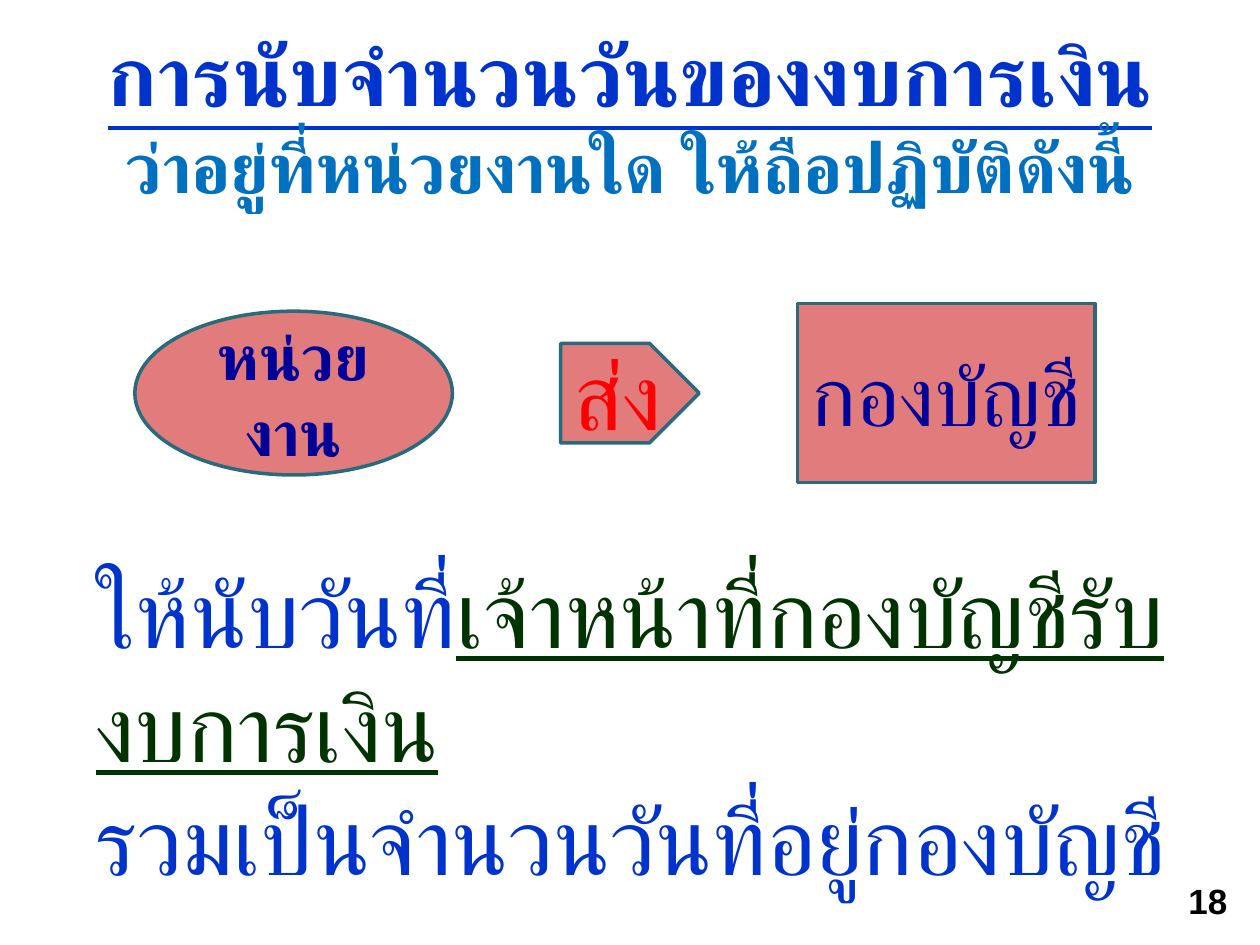
from pptx import Presentation
from pptx.dml.color import RGBColor
from pptx.enum import shapes, text
from pptx.oxml.ns import qn
from pptx.util import Inches, Pt

COLORS = {
    "blue": "0033CC", "sky": "0070C0", "navy": "000099", "green": "003300",
    "red": "FF0000", "black": "000000", "rose": "E17B7C", "teal": "296B7C",
}
ALIGN = text.PP_ALIGN
MIDDLE = text.MSO_ANCHOR.MIDDLE


def rgb(name):
    return RGBColor.from_string(COLORS[name])


def add_run(p, words, size, color, bold=False, underline=False, font="Arial"):
    r = p.add_run()
    r.text = words
    f = r.font
    f.size, f.bold, f.underline, f.name = Pt(size), bold, underline, font
    f.color.rgb = rgb(color)
    # Thai letters take the complex-script typeface
    cs = r._r.get_or_add_rPr().makeelement(qn("a:cs"), {"typeface": font})
    f._element.find(qn("a:latin")).addnext(cs)


def add_box(s, box, anchor=text.MSO_ANCHOR.TOP):
    tf = s.shapes.add_textbox(*map(Inches, box)).text_frame
    tf.word_wrap = True
    tf.vertical_anchor = anchor
    return tf


def add_title(s, box):
    tf = add_box(s, box)
    first, second = tf.paragraphs[0], tf.add_paragraph()
    first.alignment = second.alignment = ALIGN.CENTER
    add_run(first, "การนับจำนวนวันของงบการเงิน", 48, "blue", True, True, "Lato")
    add_run(second, "ว่าอยู่ที่หน่วยงานใด ให้ถือปฏิบัติดังนี้", 40, "sky", True, font="Lato")


def add_flow(s, left, middle, steps):
    """Steps of (kind, offset, width, height, words, size, color, bold), centred on one line."""
    for kind, offset, width, height, words, size, color, bold in steps:
        sp = s.shapes.add_shape(kind, Inches(left + offset), Inches(middle - height / 2),
                                Inches(width), Inches(height))
        sp.shadow.inherit = False
        sp.fill.solid()
        sp.fill.fore_color.rgb = rgb("rose")
        sp.line.color.rgb = rgb("teal")
        sp.line.width = Pt(2)
        tf = sp.text_frame
        tf.word_wrap = True
        tf.vertical_anchor = MIDDLE
        if kind == shapes.MSO_SHAPE.PENTAGON:
            # The point narrows the text area, so the word needs its full width
            tf.margin_left = tf.margin_right = 0
        p = tf.paragraphs[0]
        p.alignment = ALIGN.CENTER
        add_run(p, words, size, color, bold)


def add_rule(s, box):
    tf = add_box(s, box)
    p = tf.paragraphs[0]
    add_run(p, "ให้นับวันที่", 54, "blue")
    add_run(p, "เจ้าหน้าที่กองบัญชีรับงบการเงิน", 54, "green", underline=True)
    add_run(tf.add_paragraph(), "รวมเป็นจำนวนวันที่อยู่กองบัญชี", 54, "blue")


def add_page_number(s, box):
    p = add_box(s, box, MIDDLE).paragraphs[0]
    p.alignment = ALIGN.RIGHT
    add_run(p, "18", 20, "black", True)


def main():
    prs = Presentation()
    prs.slide_width, prs.slide_height = Inches(10), Inches(7.5)
    s = prs.slides.add_slide(prs.slide_layouts[6])
    kinds = shapes.MSO_SHAPE
    add_page_number(s, (7.51, 6.95, 2.33, 0.4))
    add_title(s, (0.67, 0.13, 8.66, 1.58))
    add_flow(s, 1.07, 3.12, [
        (kinds.OVAL, 0, 2.52, 1.3, "หน่วยงาน", 36, "navy", True),
        (kinds.PENTAGON, 3.38, 1.1, 0.79, "ส่ง", 54, "red", False),
        (kinds.RECTANGLE, 5.26, 2.36, 1.42, "กองบัญชี", 48, "navy", False),
    ])
    add_rule(s, (0.66, 4.35, 8.85, 1.92))
    prs.save("out.pptx")


if __name__ == "__main__":
    main()
